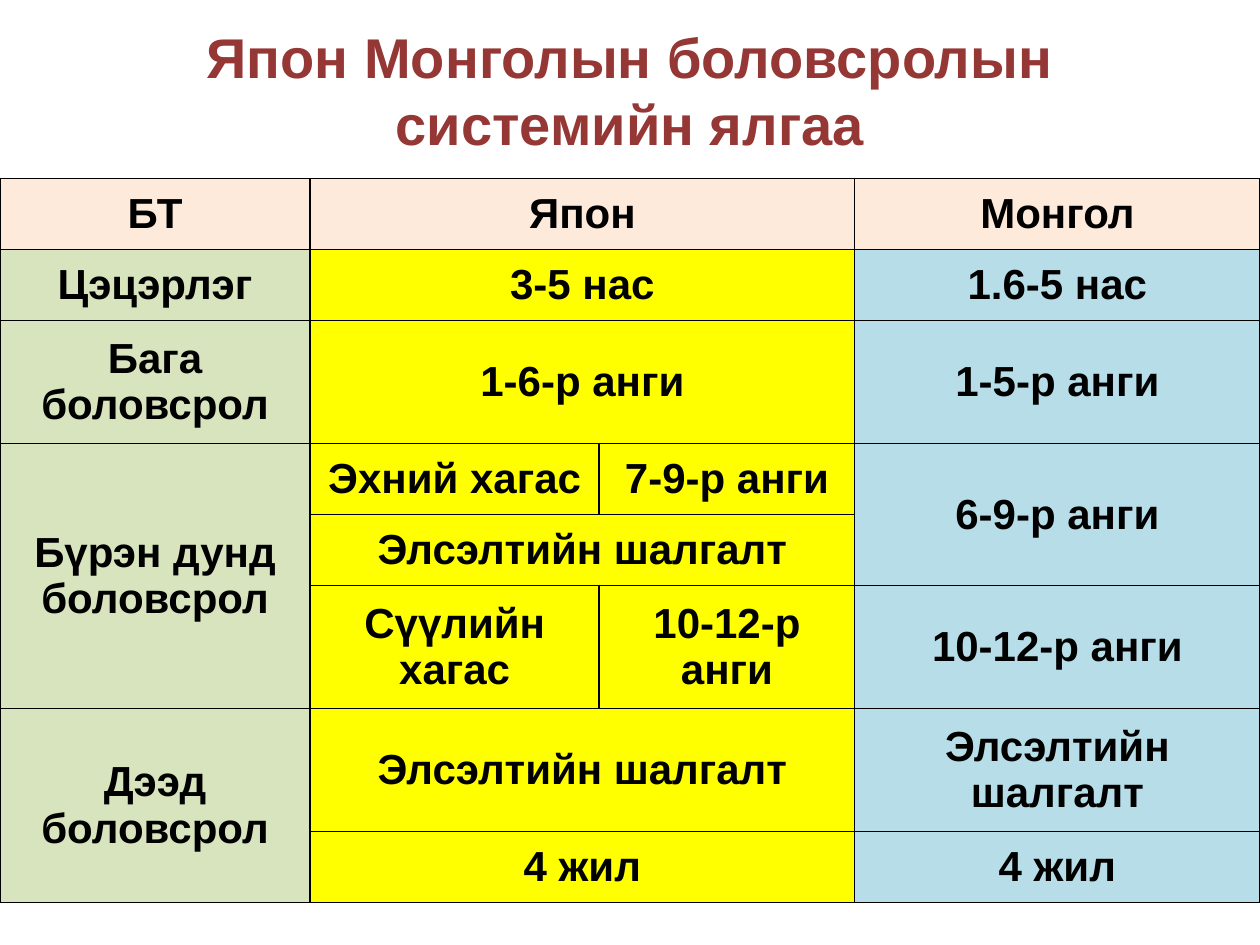
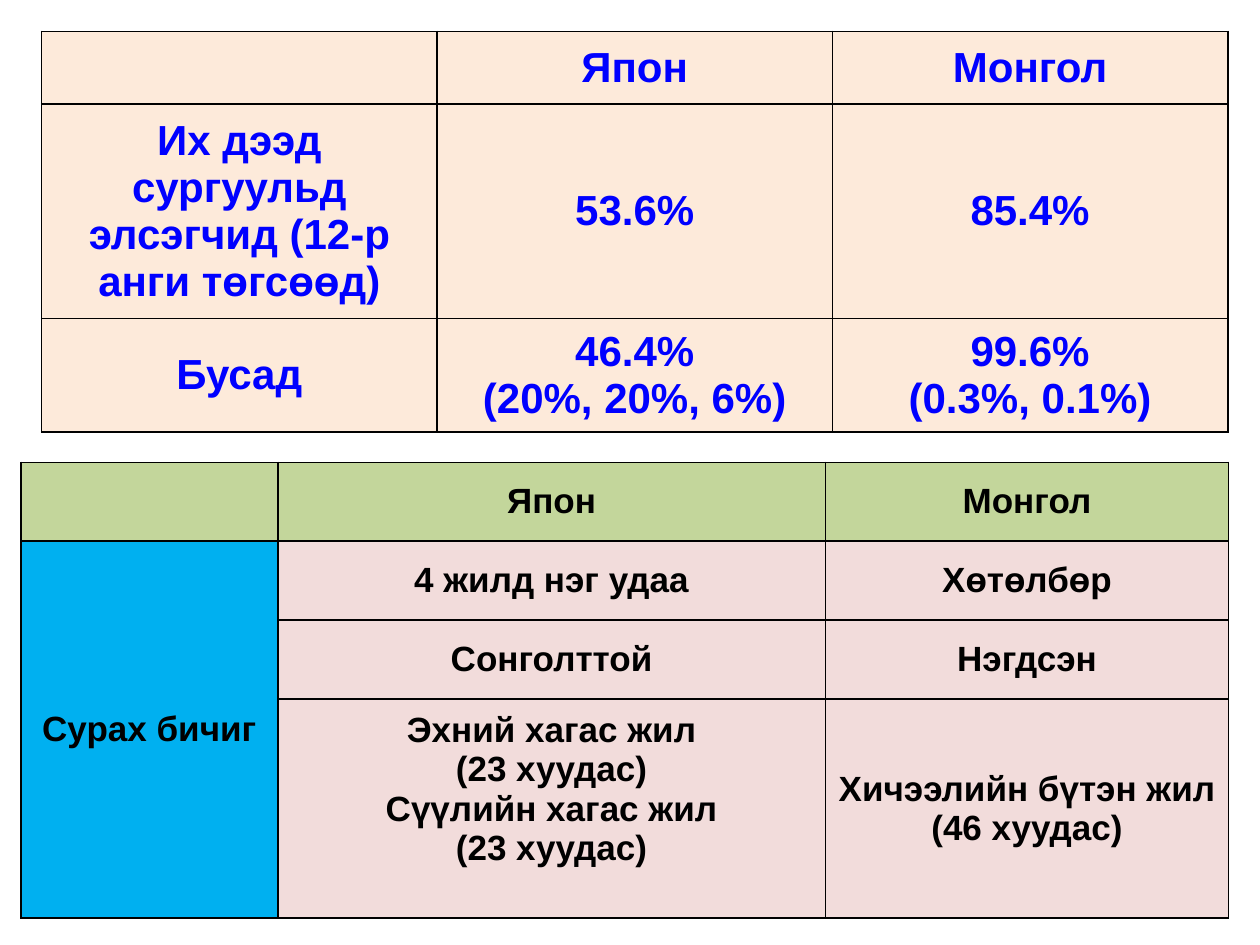
import dataclasses

import lxml.etree
import pptx
import pptx.dml.color
import pptx.enum.text
import pptx.oxml.ns
import pptx.util

Cm = pptx.util.Cm
RGB = pptx.dml.color.RGBColor.from_string


@dataclasses.dataclass(frozen=True)
class Theme:
    font: str = "Arial"
    title_size: int = 32
    large_size: int = 24
    small_size: int = 20
    title: str = "953735"
    black: str = "000000"
    blue: str = "0000FF"
    peach: str = "FDEADA"
    pale_green: str = "D7E4BD"
    green: str = "C3D69B"
    yellow: str = "FFFF00"
    pale_blue: str = "B7DEE8"
    sky: str = "00B0F0"
    rose: str = "F2DCDB"


THEME = Theme()


def write(frame, text, size=THEME.large_size, color=THEME.black):
    """Fill a text frame with bold centred text, one paragraph per line."""
    frame.word_wrap = True
    for number, line in enumerate(text.split("\n")):
        paragraph = frame.add_paragraph() if number else frame.paragraphs[0]
        paragraph.alignment = pptx.enum.text.PP_ALIGN.CENTER
        run = paragraph.add_run()
        run.text = line
        run.font.name = THEME.font
        run.font.size = pptx.util.Pt(size)
        run.font.bold = True
        run.font.color.rgb = RGB(color)


def add_grid(slide, left, top, widths, heights, rows, header_fill, column_fills,
             spans=(), **text_format):
    """Add a bordered table; sizes are in cm, spans are (row, column, last row, last column)."""
    table = slide.shapes.add_table(
        len(rows), len(widths), Cm(left), Cm(top), Cm(sum(widths)), Cm(sum(heights))).table
    table.first_row = table.horz_banding = False
    for column, width in zip(table.columns, widths):
        column.width = Cm(width)
    for row, height in zip(table.rows, heights):
        row.height = Cm(height)
    for first_row, first_column, last_row, last_column in spans:
        table.cell(first_row, first_column).merge(table.cell(last_row, last_column))

    for row_number, texts in enumerate(rows):
        for column_number, text in enumerate(texts):
            cell = table.cell(row_number, column_number)
            properties = cell._tc.get_or_add_tcPr()
            for side in ("a:lnL", "a:lnR", "a:lnT", "a:lnB"):
                border = lxml.etree.SubElement(
                    properties, pptx.oxml.ns.qn(side), w=str(pptx.util.Pt(1)))
                fill = lxml.etree.SubElement(border, pptx.oxml.ns.qn("a:solidFill"))
                lxml.etree.SubElement(fill, pptx.oxml.ns.qn("a:srgbClr"), val=THEME.black)
            cell.fill.solid()
            cell.fill.fore_color.rgb = RGB(
                column_fills[column_number] if row_number else header_fill)
            cell.vertical_anchor = pptx.enum.text.MSO_ANCHOR.MIDDLE
            if text:
                write(cell.text_frame, text, **text_format)
    return table


presentation = pptx.Presentation()
presentation.slide_width, presentation.slide_height = Cm(25.4), Cm(19.05)
blank = presentation.slide_layouts[6]

# Slide 1: the two school systems
systems = presentation.slides.add_slide(blank)
heading = systems.shapes.add_textbox(Cm(1.27), Cm(0.43), Cm(22.86), Cm(2.75)).text_frame
heading.vertical_anchor = pptx.enum.text.MSO_ANCHOR.MIDDLE
write(heading, "Япон Монголын боловсролын системийн ялгаа",
      size=THEME.title_size, color=THEME.title)

one_line, two_lines = 1.43, 2.48
add_grid(
    systems, 0, 3.6,
    widths=[6.25, 5.83, 5.15, 8.17],
    heights=[one_line, one_line, two_lines, one_line, one_line,
             two_lines, two_lines, one_line],
    rows=[
        ("БТ", "Япон", None, "Монгол"),
        ("Цэцэрлэг", "3-5 нас", None, "1.6-5 нас"),
        ("Бага боловсрол", "1-6-р анги", None, "1-5-р анги"),
        ("Бүрэн дунд боловсрол", "Эхний хагас", "7-9-р анги", "6-9-р анги"),
        (None, "Элсэлтийн шалгалт", None, None),
        (None, "Сүүлийн хагас", "10-12-р анги", "10-12-р анги"),
        ("Дээд боловсрол", "Элсэлтийн шалгалт", None, "Элсэлтийн шалгалт"),
        (None, "4 жил", None, "4 жил"),
    ],
    header_fill=THEME.peach,
    column_fills=[THEME.pale_green, THEME.yellow, THEME.yellow, THEME.pale_blue],
    spans=[(row, 1, row, 2) for row in (0, 1, 2, 4, 6, 7)]
    + [(3, 0, 5, 0), (3, 3, 4, 3), (6, 0, 7, 0)],
)

# Slide 2: enrolment and textbooks
comparison = presentation.slides.add_slide(blank)
add_grid(
    comparison, 0.84, 0.63,
    widths=[7.97] * 3,
    heights=[1.47, 4.03, 2.13],
    rows=[
        (None, "Япон", "Монгол"),
        ("Их дээд сургуульд элсэгчид (12-р анги төгсөөд)", "53.6%", "85.4%"),
        ("Бусад", "46.4%\n(20%, 20%, 6%)", "99.6%\n(0.3%, 0.1%)"),
    ],
    header_fill=THEME.peach,
    column_fills=[THEME.peach] * 3,
    color=THEME.blue,
)

textbooks = add_grid(
    comparison, 0.42, 9.32,
    widths=[5.18, 11.04, 8.13],
    heights=[1.59] * 3 + [4.2],
    rows=[
        (None, "Япон", "Монгол"),
        ("Сурах бичиг", "4 жилд нэг удаа", "Хөтөлбөр"),
        (None, "Сонголттой", "Нэгдсэн"),
        (None, "Эхний хагас жил\n(23 хуудас)\nСүүлийн хагас жил\n(23 хуудас)",
         "Хичээлийн бүтэн жил\n(46 хуудас)"),
    ],
    header_fill=THEME.green,
    column_fills=[THEME.sky, THEME.rose, THEME.rose],
    spans=[(1, 0, 3, 0)],
    size=THEME.small_size,
)
# Raise the page counts above the middle of their tall cell
textbooks.cell(3, 1).margin_bottom = Cm(0.9)

presentation.save("out.pptx")
